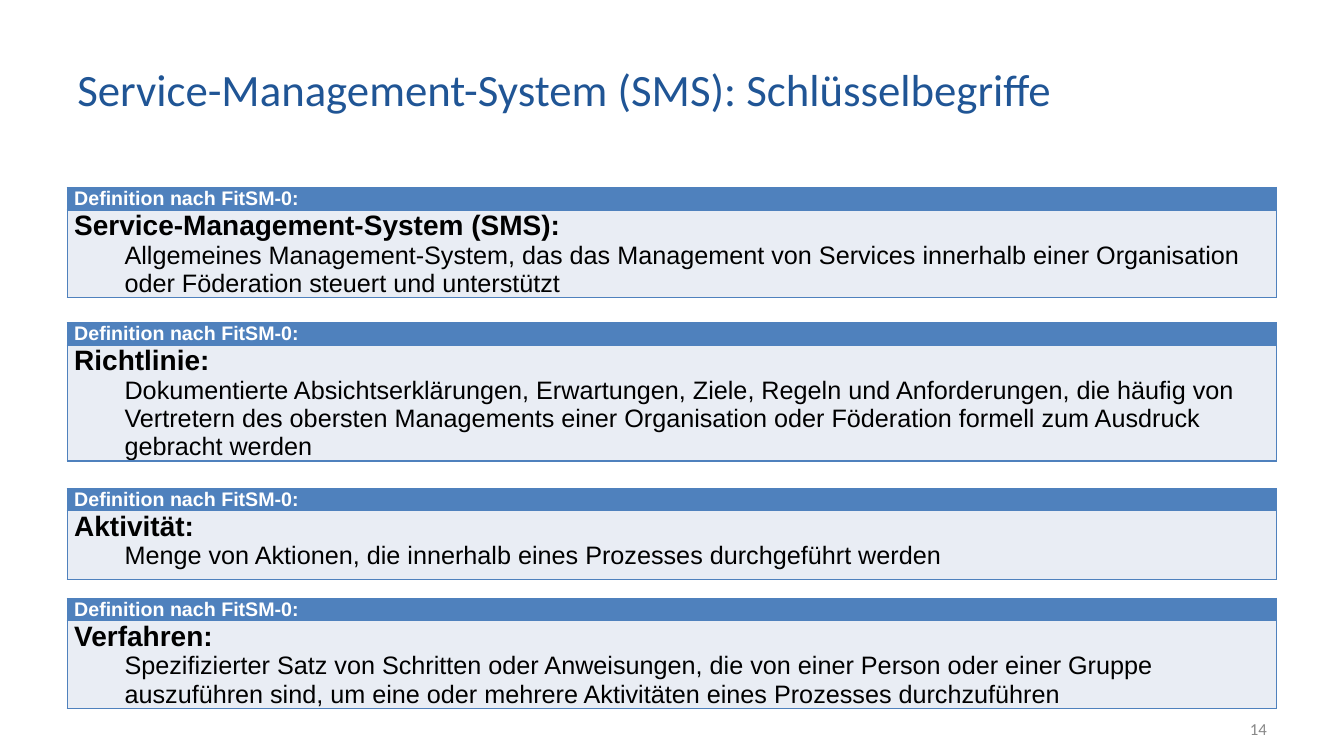
from pptx import Presentation
from pptx.dml.color import RGBColor as RGB
from pptx.enum.text import MSO_ANCHOR as Anchor, PP_ALIGN as Align
from pptx.oxml.ns import qn
from pptx.util import Pt
from lxml.etree import SubElement as Sub

BLUE, PALE = "4F81BD", "E9EDF4"
LEFT, WIDE = 48, 864

# Top, header height, body height, term, meaning
TERMS = [
    (134, 16, 56, "Service-Management-System (SMS):",
     "Allgemeines Management-System, das das Management von Services "
     "innerhalb einer Organisation oder Föderation steuert und unterstützt"),
    (230.5, 16, 56, "Richtlinie:",
     "Dokumentierte Absichtserklärungen, Erwartungen, Ziele, Regeln und "
     "Anforderungen, die häufig von Vertretern des obersten Managements "
     "einer Organisation oder Föderation formell zum Ausdruck gebracht werden"),
    (349, 14.5, 49, "Aktivität:",
     "Menge von Aktionen, die innerhalb eines Prozesses durchgeführt werden"),
    (427.5, 16, 56, "Verfahren:",
     "Spezifizierter Satz von Schritten oder Anweisungen, die von einer Person "
     "oder einer Gruppe auszuführen sind, um eine oder mehrere Aktivitäten "
     "eines Prozesses durchzuführen"),
]


def paint(fill, color):
    fill.solid()
    fill.fore_color.rgb = RGB.from_string(color)


def style(para, text, size, color, font="Arial", bold=False):
    para.text = text
    para.font.name = font
    para.font.size = Pt(size)
    para.font.bold = bold
    para.font.color.rgb = RGB.from_string(color)


def place(shape, left, top, width, height):
    shape.left, shape.top = Pt(left), Pt(top)
    shape.width, shape.height = Pt(width), Pt(height)


def dress(cell, color):
    """Set margins, borders and fill of a cell."""
    cell.margin_left = cell.margin_right = Pt(5)
    cell.margin_top = cell.margin_bottom = Pt(0)
    props = cell._tc.get_or_add_tcPr()
    for side in ("lnL", "lnR", "lnT", "lnB"):
        line = Sub(props, qn("a:" + side), w=str(Pt(1)))
        Sub(Sub(line, qn("a:solidFill")), qn("a:srgbClr"), val=BLUE)
    paint(cell.fill, color)


def define(slide, top, head, body, term, text):
    """Add one definition table."""
    frame = slide.shapes.add_table(2, 1, Pt(LEFT), Pt(top), Pt(WIDE), Pt(head + body))
    table = frame.table
    table.rows[0].height, table.rows[1].height = Pt(head), Pt(body)
    label, cell = table.cell(0, 0), table.cell(1, 0)
    dress(label, BLUE)
    dress(cell, PALE)
    style(label.text_frame.paragraphs[0], "Definition nach FitSM-0:", 14, "FFFFFF", bold=True)
    style(cell.text_frame.paragraphs[0], term, 20, "000000", bold=True)
    para = cell.text_frame.add_paragraph()
    para.level = 1
    props = para._p.get_or_add_pPr()
    props.set("marL", str(Pt(36)))
    props.set("indent", "0")
    style(para, text, 18, "000000")


def main():
    deck = Presentation()
    deck.slide_width, deck.slide_height = Pt(960), Pt(540)
    slide = deck.slides.add_slide(deck.slide_layouts[5])

    # Title
    title = slide.shapes.title
    place(title, LEFT, 21.5, 713.5, 83)
    title.text_frame.vertical_anchor = Anchor.MIDDLE
    para = title.text_frame.paragraphs[0]
    style(para, "Service-Management-System (SMS): Schlüsselbegriffe", 32, "205595", "Calibri")
    para.alignment = Align.LEFT

    # Definitions
    for term in TERMS:
        define(slide, *term)

    # Page number
    box = slide.shapes.add_textbox(Pt(688), Pt(506), Pt(224), Pt(29))
    box.text_frame.word_wrap = True
    box.text_frame.vertical_anchor = Anchor.MIDDLE
    para = box.text_frame.paragraphs[0]
    style(para, "14", 12, "888888", "Calibri")
    para.alignment = Align.RIGHT

    deck.save("out.pptx")


if __name__ == "__main__":
    main()
